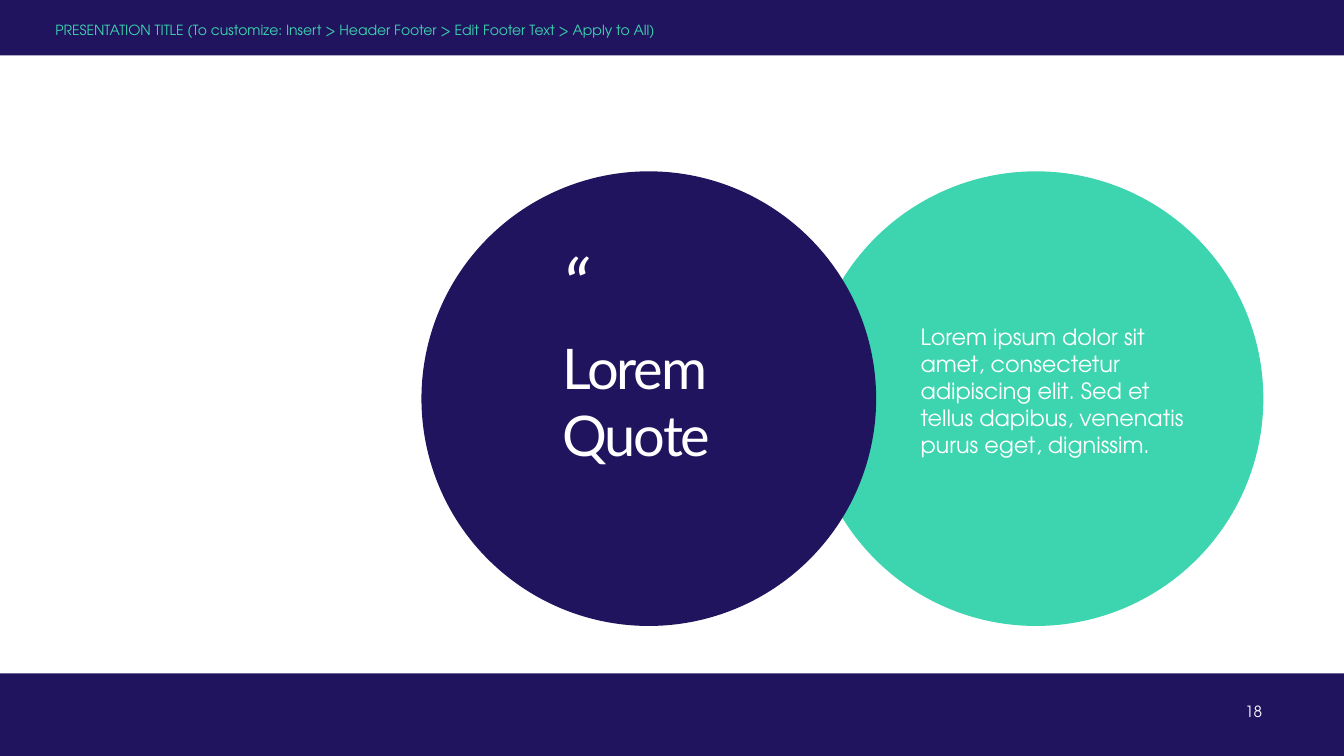
from copy import deepcopy

from pptx import Presentation
from pptx.dml.color import RGBColor
from pptx.enum.shapes import MSO_SHAPE
from pptx.enum.text import MSO_ANCHOR, MSO_AUTO_SIZE, PP_ALIGN
from pptx.oxml.ns import qn
from pptx.util import Inches, Pt

NAVY = "21145F"
CIRCLE_NAVY = "20145E"
GREEN = "3CD5AF"
WHITE = "FFFFFF"
HEADING_FONT = "Lato"
BODY_FONT = "TeX Gyre Adventor"
CIRCLE_TOP, CIRCLE_SIZE = 1.7, 4.51


def rgb(color):
    return RGBColor.from_string(color)


def add_filled_shape(slide, kind, box, color):
    shape = slide.shapes.add_shape(kind, *map(Inches, box))
    shape.shadow.inherit = False
    shape.fill.solid()
    shape.fill.fore_color.rgb = rgb(color)
    shape.line.fill.background()


def add_circle(slide, left, color):
    box = (left, CIRCLE_TOP, CIRCLE_SIZE, CIRCLE_SIZE)
    add_filled_shape(slide, MSO_SHAPE.OVAL, box, color)


def place(shape, box):
    """Move a placeholder to its box, in front of the shapes drawn so far."""
    shape.left, shape.top, shape.width, shape.height = map(Inches, box)
    shape.element.getparent().append(shape.element)
    return shape


def add_text_box(slide, box):
    return slide.shapes.add_textbox(*map(Inches, box))


def write(shape, text, size, font, color=WHITE, top=0, bottom=0,
          align=PP_ALIGN.LEFT, anchor=MSO_ANCHOR.TOP,
          auto_size=MSO_AUTO_SIZE.NONE, line_spacing=1.0, italic=False):
    frame = shape.text_frame
    frame.text = text
    frame.word_wrap = True
    frame.auto_size = auto_size
    frame.vertical_anchor = anchor
    frame.margin_left = frame.margin_right = 0
    frame.margin_top, frame.margin_bottom = Inches(top), Inches(bottom)
    paragraph = frame.paragraphs[0]
    paragraph.alignment = align
    paragraph.line_spacing = line_spacing
    paragraph.space_before = Pt(0)
    for run in paragraph.runs:
        run.font.size = Pt(size)
        run.font.name = font
        run.font.italic = italic
        run.font.color.rgb = rgb(color)


def tighten_letters(shape, points):
    """Set the letter spacing and give line breaks the format of the runs."""
    for properties in shape.element.findall(f".//{qn('a:rPr')}"):
        properties.set("spc", str(round(points * 100)))
    for line_break in shape.element.findall(f".//{qn('a:br')}"):
        line_break.append(deepcopy(properties))


def remove_bullet(paragraph):
    properties = paragraph._p.get_or_add_pPr()
    properties.set("marL", "0")
    properties.set("indent", "0")
    properties.append(properties.makeelement(qn("a:buNone"), {}))


def main():
    presentation = Presentation()
    presentation.slide_width = Inches(13.33)
    presentation.slide_height = Inches(7.5)
    slide = presentation.slides.add_slide(presentation.slide_layouts[1])
    title, body = slide.placeholders

    add_filled_shape(slide, MSO_SHAPE.RECTANGLE, (-0.18, -0.27, 13.79, 0.82), NAVY)
    add_filled_shape(slide, MSO_SHAPE.RECTANGLE, (0, 6.68, 13.33, 0.82), NAVY)
    add_circle(slide, 8.02, GREEN)
    add_circle(slide, 4.18, CIRCLE_NAVY)

    place(title, (5.58, 3.1, 3.29, 1.95))
    write(title, "Lorem\vQuote", 40, HEADING_FONT, top=0.21)
    tighten_letters(title, -1.5)

    quote_mark = add_text_box(slide, (5.58, 2.37, 0.87, 0.57))
    write(quote_mark, "“", 54, HEADING_FONT, top=0.21, line_spacing=0.75, italic=True)
    tighten_letters(quote_mark, -1.5)

    place(body, (9.13, 3.16, 2.67, 1.45))
    write(body, "Lorem ipsum dolor sit amet, consectetur adipiscing elit. "
          "Sed et tellus dapibus, venenatis purus eget, dignissim.",
          16, BODY_FONT, top=0.05, bottom=0.05,
          auto_size=MSO_AUTO_SIZE.SHAPE_TO_FIT_TEXT)
    remove_bullet(body.text_frame.paragraphs[0])

    page_number = add_text_box(slide, (9.54, 6.97, 2.98, 0.24))
    write(page_number, "18", 11, BODY_FONT, align=PP_ALIGN.RIGHT)

    header = add_text_box(slide, (0.55, 0.1, 11.56, 0.4))
    write(header, "PRESENTATION TITLE (To customize: Insert > Header Footer > "
          "Edit Footer Text > Apply to All)", 10, BODY_FONT, GREEN,
          anchor=MSO_ANCHOR.MIDDLE)

    presentation.save("out.pptx")


if __name__ == "__main__":
    main()
